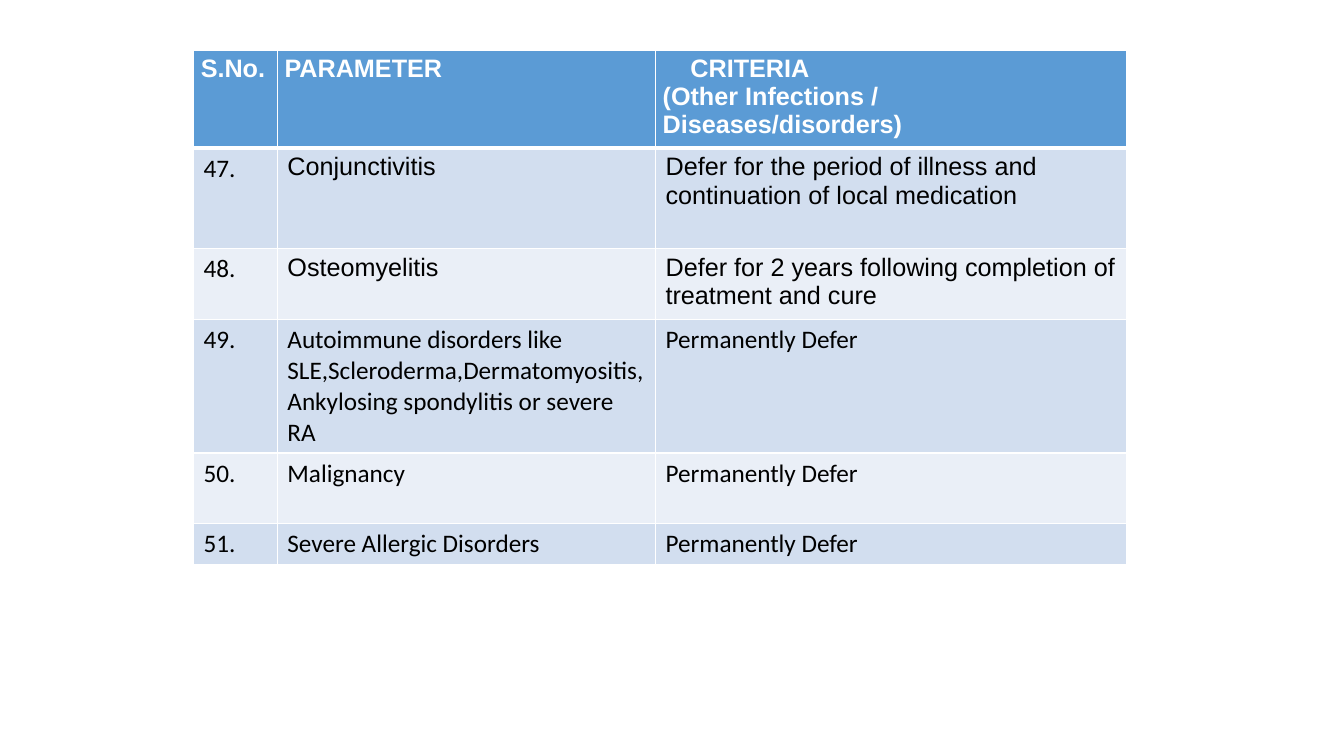
from dataclasses import dataclass

from pptx import Presentation
from pptx import util as u
from pptx.dml import color
from pptx.oxml import ns
from lxml import etree


@dataclass(frozen=True)
class Theme:
    header: str = "5B9BD5"
    odd_band: str = "D2DEEF"
    even_band: str = "EAEFF7"
    border: str = "FFFFFF"
    header_text: str = "FFFFFF"
    body_text: str = "000000"
    heading_font: str = "Arial"
    body_font: str = "Calibri"
    size: int = 18


THEME = Theme()

HEADINGS = ["S.No.", "PARAMETER", "CRITERIA\n(Other Infections / Diseases/disorders)"]

# Each row: height in cm, font of parameter and criterion, number, parameter, criterion
ROWS = [
    (2.54, THEME.heading_font, "47.", "Conjunctivitis",
     "Defer for the period of illness and continuation of local medication"),
    (1.79, THEME.heading_font, "48.", "Osteomyelitis",
     "Defer for 2 years following completion of treatment and cure"),
    (3.3, THEME.body_font, "49.",
     "Autoimmune disorders like SLE,Scleroderma,Dermatomyositis,"
     "Ankylosing spondylitis or severe RA",
     "Permanently Defer"),
    (1.78, THEME.body_font, "50.", "Malignancy", "Permanently Defer"),
    (1.03, THEME.body_font, "51.", "Severe Allergic Disorders", "Permanently Defer"),
]
HEADER_HEIGHT = 2.46
COLUMN_WIDTHS = [2.11, 9.53, 11.86]


def set_borders(cell, bottom=1):
    """Draw the four cell borders; widths are in points."""
    tc_pr = cell._tc.get_or_add_tcPr()
    for side, width in (("L", 1), ("R", 1), ("T", 1), ("B", bottom)):
        line = etree.SubElement(tc_pr, ns.qn(f"a:ln{side}"), w=str(u.Pt(width)))
        fill = etree.SubElement(line, ns.qn("a:solidFill"))
        etree.SubElement(fill, ns.qn("a:srgbClr"), val=THEME.border)


def fill_cell(cell, words, fill, font, ink, bold=False, bottom=1):
    set_borders(cell, bottom)
    cell.fill.solid()
    cell.fill.fore_color.rgb = color.RGBColor.from_string(fill)
    tf = cell.text_frame
    tf.text = words
    for p in tf.paragraphs:
        for r in p.runs:
            r.font.name = font
            r.font.size = u.Pt(THEME.size)
            r.font.bold = bold
            r.font.color.rgb = color.RGBColor.from_string(ink)


def add_header(table):
    for cell, words in zip(table.rows[0].cells, HEADINGS):
        fill_cell(cell, words, THEME.header, THEME.heading_font,
                  THEME.header_text, bold=True, bottom=3)
        cell.margin_left = cell.margin_right = u.Cm(0.18)
        cell.margin_top = cell.margin_bottom = u.Cm(0.1)
    # Indent the first line of the criteria heading
    p = table.cell(0, 2).text_frame.paragraphs[0]
    p._p.get_or_add_pPr().set("marL", str(u.Cm(0.7)))


def add_body(table):
    for i, (_, font, *words) in enumerate(ROWS, start=1):
        band = THEME.odd_band if i % 2 else THEME.even_band
        fonts = [THEME.body_font, font, font]
        for cell, value, face in zip(table.rows[i].cells, words, fonts):
            fill_cell(cell, value, band, face, THEME.body_text)


def add_criteria_table(s):
    heights = [HEADER_HEIGHT] + [row[0] for row in ROWS]
    sp = s.shapes.add_table(len(heights), len(COLUMN_WIDTHS), u.Cm(4.88), u.Cm(1.27),
                            u.Cm(sum(COLUMN_WIDTHS)), u.Cm(sum(heights)))
    table = sp.table
    for column, width in zip(table.columns, COLUMN_WIDTHS):
        column.width = u.Cm(width)
    for row, height in zip(table.rows, heights):
        row.height = u.Cm(height)
    add_header(table)
    add_body(table)


def main():
    prs = Presentation()
    prs.slide_width, prs.slide_height = u.Cm(33.87), u.Cm(19.05)
    s = prs.slides.add_slide(prs.slide_layouts[6])  # blank layout
    add_criteria_table(s)
    prs.save("out.pptx")


if __name__ == "__main__":
    main()
